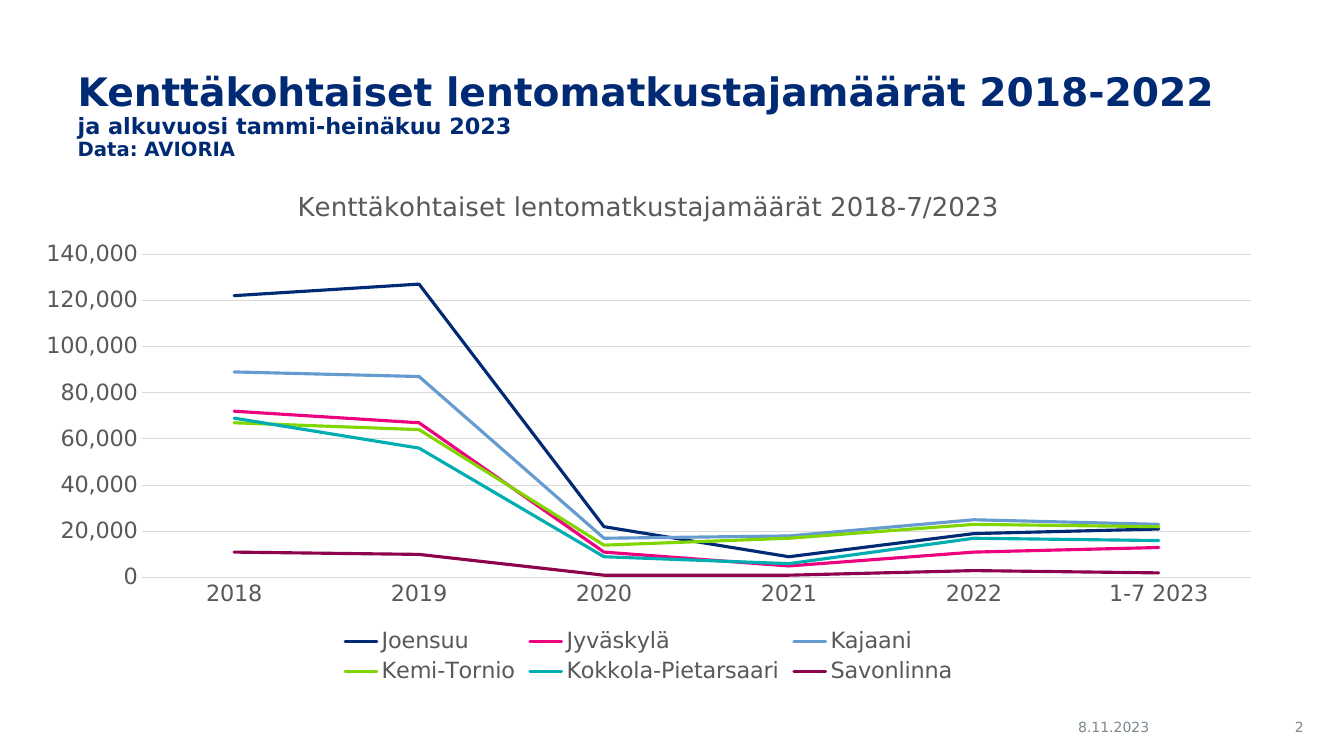
from lxml import etree
from pptx import Presentation
from pptx.chart.data import CategoryChartData
from pptx.dml.color import RGBColor
from pptx.enum.chart import XL_CHART_TYPE, XL_LEGEND_POSITION, XL_MARKER_STYLE, XL_TICK_MARK
from pptx.enum.text import MSO_ANCHOR, MSO_AUTO_SIZE, PP_ALIGN
from pptx.oxml import parse_xml
from pptx.oxml.ns import nsdecls
from pptx.util import Inches, Pt

NAVY, GREY, TEXT_GREY, GRID = "002B74", "7C878E", "595959", "D9D9D9"


def rgb(color):
    return RGBColor.from_string(color)


def set_font(font, size, color, bold=False):
    font.name = "DejaVu Sans"
    font.size = Pt(size)
    font.bold = bold
    font.color.rgb = rgb(color)


prs = Presentation()
prs.slide_width, prs.slide_height = Inches(13.33), Inches(7.5)
s = prs.slides.add_slide(prs.slide_layouts[5])

# Title
title = s.shapes.title
title.left, title.top = Inches(0.67), Inches(0.67)
title.width, title.height = Inches(11.75), Inches(1.21)
tf = title.text_frame
tf.word_wrap = True
tf.auto_size = MSO_AUTO_SIZE.NONE
tf.vertical_anchor = MSO_ANCHOR.TOP
p = tf.paragraphs[0]
p.text = "Kenttäkohtaiset lentomatkustajamäärät 2018-2022\vja alkuvuosi tammi-heinäkuu 2023\vData: AVIORIA"
p.alignment = PP_ALIGN.LEFT
p.line_spacing = 0.9
for r, size in zip(p.runs, (28, 16, 14)):
    set_font(r.font, size, NAVY, bold=True)

# Passenger chart
airports = [
    ("Joensuu", NAVY, (122000, 127000, 22000, 9000, 19000, 21000)),
    ("Jyväskylä", "EC017F", (72000, 67000, 11000, 5000, 11000, 13000)),
    ("Kajaani", "669BD0", (89000, 87000, 17000, 18000, 25000, 23000)),
    ("Kemi-Tornio", "81D600", (67000, 64000, 14000, 17000, 23000, 22000)),
    ("Kokkola-Pietarsaari", "00AEB2", (69000, 56000, 9000, 6000, 17000, 16000)),
    ("Savonlinna", "8E014C", (11000, 10000, 1000, 1000, 3000, 2000)),
]
data = CategoryChartData(number_format="#,##0")
data.categories = ["2018", "2019", "2020", "2021", "2022", "1-7 2023"]
for name, _, passengers in airports:
    data.add_series(name, passengers)
chart = s.shapes.add_chart(XL_CHART_TYPE.LINE, Inches(0.21), Inches(1.67),
                           Inches(12.45), Inches(5.16), data).chart
set_font(chart.font, 16, TEXT_GREY)
chart.has_title = True
tf = chart.chart_title.text_frame
tf.text = "Kenttäkohtaiset lentomatkustajamäärät 2018-7/2023"
set_font(tf.paragraphs[0].runs[0].font, 18.6, TEXT_GREY)
chart.chart_title.include_in_layout = False

chart.has_legend = True
chart.legend.position = XL_LEGEND_POSITION.BOTTOM
chart.legend.include_in_layout = False
set_font(chart.legend.font, 16, TEXT_GREY)

for axis in (chart.category_axis, chart.value_axis):
    axis.major_tick_mark = axis.minor_tick_mark = XL_TICK_MARK.NONE
    set_font(axis.tick_labels.font, 16, TEXT_GREY)
chart.category_axis.format.line.color.rgb = rgb(GRID)
chart.category_axis.format.line.width = Pt(0.75)

values = chart.value_axis
values.minimum_scale, values.maximum_scale, values.major_unit = 0, 140000, 20000
values.tick_labels.number_format = "#,##0"
values.tick_labels.number_format_is_linked = False
values.format.line.fill.background()
values.major_gridlines.format.line.color.rgb = rgb(GRID)
values.major_gridlines.format.line.width = Pt(0.75)

plot = chart.plots[0]
plot.vary_by_categories = False
for series, (_, color, _) in zip(plot.series, airports):
    series.smooth = False
    series.marker.style = XL_MARKER_STYLE.NONE
    series.format.line.color.rgb = rgb(color)
    series.format.line.width = Pt(2.25)
    series.format.line._ln.set("cap", "rnd")

# Fixed inner plot area, as fractions of the chart
plot_area = chart._chartSpace.chart.plotArea
for old in plot_area.findall("{*}layout"):
    plot_area.remove(old)
layout = parse_xml(f'<c:layout {nsdecls("c")}><c:manualLayout/></c:layout>')
settings = [("layoutTarget", "inner"), ("xMode", "edge"), ("yMode", "edge"),
            ("x", "0.096"), ("y", "0.165"), ("w", "0.884"), ("h", "0.622")]
for tag, val in settings:
    etree.SubElement(layout[0], f"{{{layout.nsmap['c']}}}{tag}").set("val", val)
plot_area.insert(0, layout)

# Date and page number
for left, width, text, align in [(10.02, 2.05, "8.11.2023", PP_ALIGN.CENTER),
                                 (12.36, 0.67, "2", PP_ALIGN.RIGHT)]:
    tf = s.shapes.add_textbox(Inches(left), Inches(7.07), Inches(width), Inches(0.28)).text_frame
    tf.word_wrap = True
    tf.vertical_anchor = MSO_ANCHOR.MIDDLE
    p = tf.paragraphs[0]
    p.text = text
    p.alignment = align
    set_font(p.runs[0].font, 10, GREY)

prs.save("out.pptx")
